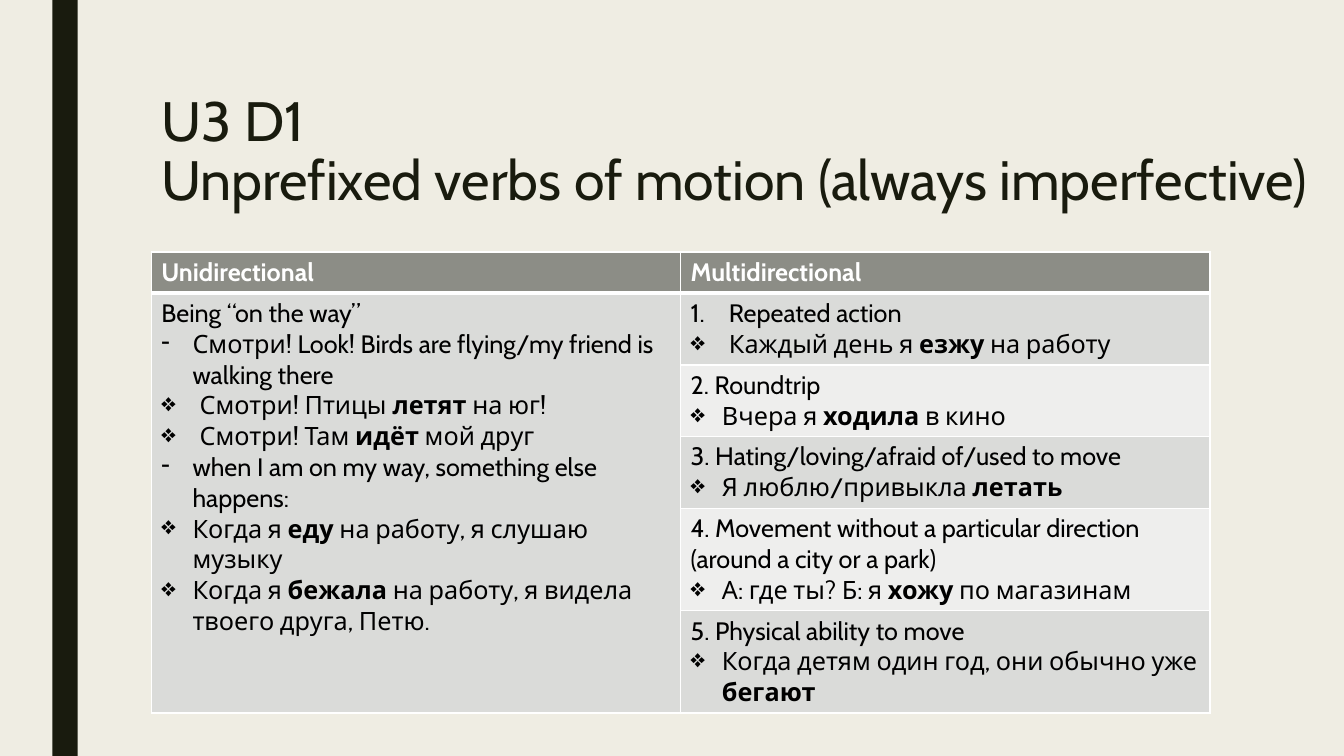
from dataclasses import dataclass

from lxml import etree
from pptx import Presentation
from pptx.dml.color import RGBColor
from pptx.enum.shapes import MSO_SHAPE
from pptx.enum.text import MSO_ANCHOR, MSO_AUTO_SIZE, PP_ALIGN
from pptx.oxml.ns import qn
from pptx.util import Inches, Pt

RECTANGLE = MSO_SHAPE.RECTANGLE
TOP = MSO_ANCHOR.TOP
NO_AUTOFIT = MSO_AUTO_SIZE.NONE
LEFT = PP_ALIGN.LEFT


@dataclass(frozen=True)
class Theme:
    font: str = "Cabin"
    title_size: float = 39.6
    table_size: float = 18
    background: str = "EFEDE3"
    dark: str = "191B0E"
    header: str = "8C8D86"
    band: str = "DADBD9"
    light_band: str = "EEEEED"
    white: str = "FFFFFF"
    black: str = "000000"


THEME = Theme()
NARROW, WIDE = 0.31, 0.38

UNIDIRECTIONAL = [
    (None, 0, "Being “on the way”"),
    ("-", NARROW, "Смотри! Look! Birds are flying/my friend is walking there"),
    ("❖", WIDE, "Смотри! Птицы *летят* на юг!"),
    ("❖", WIDE, "Смотри! Там *идёт* мой друг"),
    ("-", NARROW, "when I am on my way, something else happens:"),
    ("❖", NARROW, "Когда я *еду* на работу, я слушаю музыку"),
    ("❖", NARROW, "Когда я *бежала* на работу, я видела твоего друга, Петю."),
]
MULTIDIRECTIONAL = [
    [("1.", WIDE, "Repeated action"), ("❖", WIDE, "Каждый день я *езжу* на работу")],
    [(None, 0, "2. Roundtrip"), ("❖", NARROW, "Вчера я *ходила* в кино")],
    [(None, 0, "3. Hating/loving/afraid of/used to move"),
     ("❖", NARROW, "Я люблю/привыкла *летать*")],
    [(None, 0, "4. Movement without a particular direction (around a city or a park)"),
     ("❖", NARROW, "А: где ты? Б: я *хожу* по магазинам")],
    [(None, 0, "5. Physical ability to move"),
     ("❖", NARROW, "Когда детям один год, они обычно уже *бегают*")],
]
ROW_HEIGHTS = [0.41, 0.7, 0.7, 0.7, 1.01, 1.01]


def style_cell(cell, fill, bottom_width):
    cell.fill.solid()
    cell.fill.fore_color.rgb = RGBColor.from_string(fill)
    properties = cell._tc.get_or_add_tcPr()
    for position, side in enumerate(("lnL", "lnR", "lnT", "lnB")):
        width = bottom_width if side == "lnB" else 1
        border = etree.Element(qn(f"a:{side}"), w=str(Pt(width)))
        solid = etree.SubElement(border, qn("a:solidFill"))
        etree.SubElement(solid, qn("a:srgbClr"), val=THEME.white)
        properties.insert(position, border)


def write_entries(cell, entries, color):
    text_frame = cell.text_frame
    for index, (bullet, indent, text) in enumerate(entries):
        paragraph = text_frame.add_paragraph() if index else text_frame.paragraphs[0]
        if bullet:
            properties = paragraph._p.get_or_add_pPr()
            properties.set("marL", str(Inches(indent)))
            properties.set("indent", str(-Inches(indent)))
            if bullet == "1.":
                etree.SubElement(properties, qn("a:buAutoNum"), type="arabicPeriod")
            else:
                etree.SubElement(properties, qn("a:buChar"), char=bullet)
        for part, words in enumerate(text.split("*")):
            if words:
                run = paragraph.add_run()
                run.text = words
                run.font.name = THEME.font
                run.font.size = Pt(THEME.table_size)
                run.font.bold = part % 2 == 1
                run.font.color.rgb = RGBColor.from_string(color)


presentation = Presentation()
presentation.slide_width = Inches(13.33)
presentation.slide_height = Inches(7.5)
slide = presentation.slides.add_slide(presentation.slide_layouts[5])
slide.background.fill.solid()
slide.background.fill.fore_color.rgb = RGBColor.from_string(THEME.background)

side_bar = slide.shapes.add_shape(RECTANGLE, Inches(0.52), 0, Inches(0.25), Inches(7.5))
side_bar.shadow.inherit = False
side_bar.fill.solid()
side_bar.fill.fore_color.rgb = RGBColor.from_string(THEME.dark)
side_bar.line.fill.background()

title = slide.shapes.title
title.left, title.top = Inches(1.5), Inches(0.88)
title.width, title.height = Inches(11.67), Inches(1.62)
title.text_frame.text = "U3 D1\vUnprefixed verbs of motion (always imperfective)"
title.text_frame.auto_size = NO_AUTOFIT
title.text_frame.vertical_anchor = TOP
title.text_frame.word_wrap = True
title_paragraph = title.text_frame.paragraphs[0]
title_paragraph.alignment = LEFT
title_paragraph.line_spacing = 0.89
for run in title_paragraph.runs:
    run.font.name = THEME.font
    run.font.size = Pt(THEME.title_size)
    run.font.color.rgb = RGBColor.from_string(THEME.dark)

table = slide.shapes.add_table(
    len(ROW_HEIGHTS), 2, Inches(1.5), Inches(2.5), Inches(10.5), Inches(sum(ROW_HEIGHTS))
).table
for row_index, height in enumerate(ROW_HEIGHTS):
    table.rows[row_index].height = Inches(height)
    for column_index in range(2):
        if row_index == 0:
            fill = THEME.header
        elif column_index == 0 or row_index % 2:
            fill = THEME.band
        else:
            fill = THEME.light_band
        style_cell(table.cell(row_index, column_index), fill, 1 if row_index else 3)

table.cell(1, 0).merge(table.cell(5, 0))
for column_index, heading in enumerate(("Unidirectional", "Multidirectional")):
    write_entries(table.cell(0, column_index), [(None, 0, f"*{heading}*")], THEME.white)
write_entries(table.cell(1, 0), UNIDIRECTIONAL, THEME.black)
for row_index, entries in enumerate(MULTIDIRECTIONAL, start=1):
    write_entries(table.cell(row_index, 1), entries, THEME.black)

presentation.save("out.pptx")
